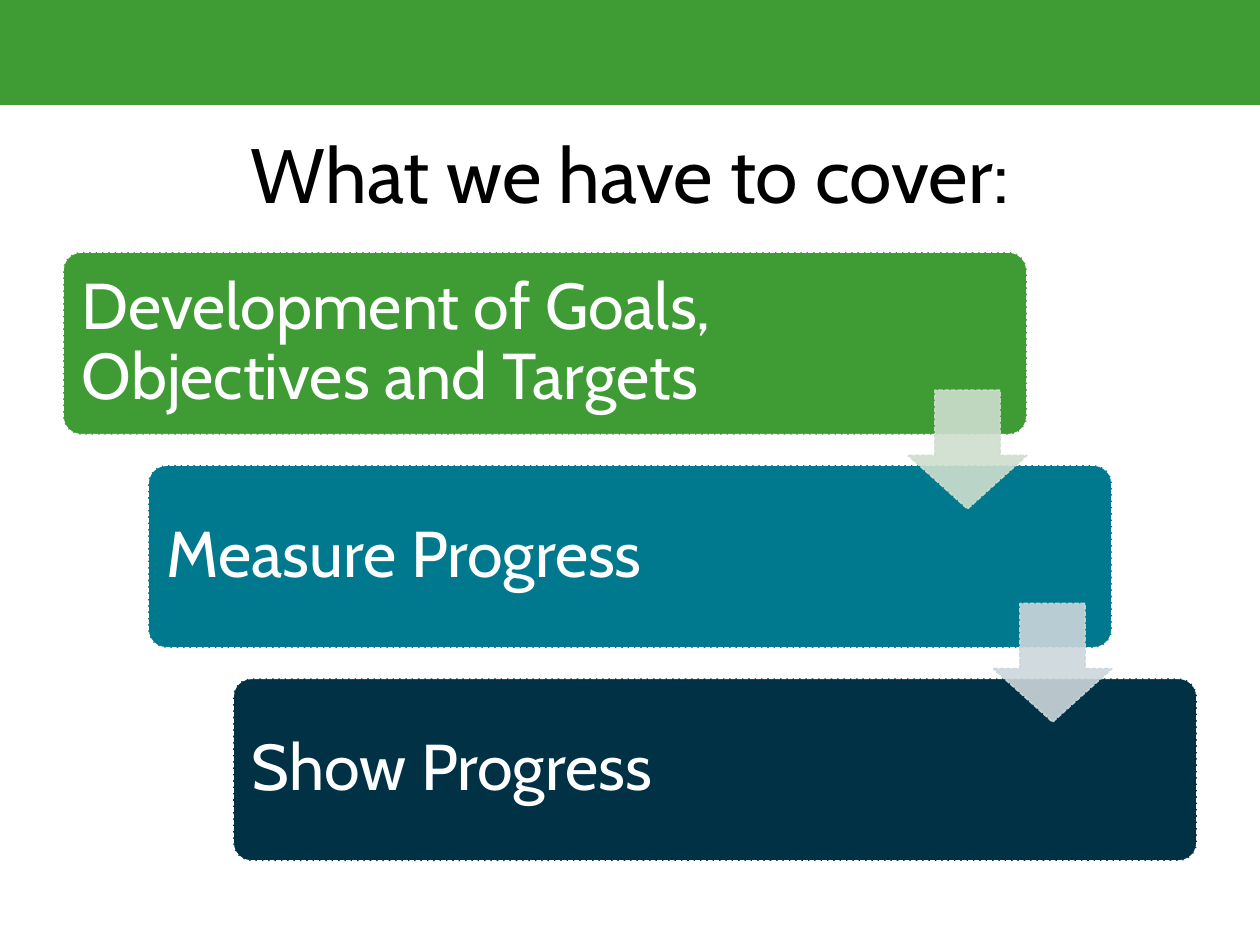
from pptx import Presentation
from pptx.dml.color import RGBColor
from pptx.enum.dml import MSO_LINE
from pptx.enum.shapes import MSO_SHAPE
from pptx.enum.text import MSO_ANCHOR, PP_ALIGN
from pptx.oxml.ns import qn
from pptx.util import Pt
from lxml import etree

RECT, ROUND, ARROW = MSO_SHAPE.RECTANGLE, MSO_SHAPE.ROUNDED_RECTANGLE, MSO_SHAPE.DOWN_ARROW
DASH, MIDDLE = MSO_LINE.SQUARE_DOT, MSO_ANCHOR.MIDDLE
LEFT, CENTER = PP_ALIGN.LEFT, PP_ALIGN.CENTER

TITLE = "What we have to cover:"
STEPS = [
    ("Development of Goals, Objectives and Targets", "3F9C35", 444.2),
    ("Measure Progress", "00798E", 434.2),
    ("Show Progress", "003145", 434.2),
]
ARROWS = ["CFDECE", "CCD7DB"]
THEME = {"font": "Cabin", "band": "3F9C35", "dark": "000000", "light": "FFFFFF",
         "title": 44, "step": 37, "line": 0.9, "alpha": 90}

WIDE, HIGH = 720, 540
BOX_W, BOX_H = 550.8, 104.4
X, Y, DX, DY = 36, 144, 48.6, 121.8
SIDE, DROP = 67.8, 79


def draw(slide, kind, at, fill, edge=None, adjust=()):
    shape = slide.shapes.add_shape(kind, *map(Pt, at))
    shape.shadow.inherit = False
    shape.fill.solid()
    shape.fill.fore_color.rgb = RGBColor.from_string(fill)
    for i, value in enumerate(adjust):
        shape.adjustments[i] = value
    if edge:
        shape.line.color.rgb = RGBColor.from_string(edge)
        shape.line.width = Pt(THEME["line"])
        shape.line.dash_style = DASH
    else:
        shape.line.fill.background()
    return shape


def fade(shape):
    for color in shape.element.spPr.iter(qn("a:srgbClr")):
        etree.SubElement(color, qn("a:alpha"), val=str(THEME["alpha"] * 1000))


def write(slide, text, at, size, color, align, inset, space):
    frame = slide.shapes.add_textbox(*map(Pt, at)).text_frame
    form = {"word_wrap": True, "vertical_anchor": MIDDLE}
    for side in ("left", "right", "top", "bottom"):
        form["margin_" + side] = Pt(inset)
    for name, value in form.items():
        setattr(frame, name, value)
    para = frame.paragraphs[0]
    para.text = text
    para.alignment = align
    para.line_spacing = space
    para.font.name = THEME["font"]
    para.font.size = Pt(size)
    para.font.color.rgb = RGBColor.from_string(color)


def main():
    deck = Presentation()
    deck.slide_width, deck.slide_height = Pt(WIDE), Pt(HIGH)
    slide = deck.slides.add_slide(deck.slide_layouts[6])

    draw(slide, RECT, (0, 0, WIDE, 60), THEME["band"])
    write(slide, TITLE, (36, 66, 648, 66), THEME["title"], THEME["dark"], CENTER, 3.6, 1.0)

    for i, (text, fill, width) in enumerate(STEPS):
        left, top = X + i * DX, Y + i * DY
        draw(slide, ROUND, (left, top, BOX_W, BOX_H), fill, THEME["light"], [0.1])
        write(slide, text, (left, top, width, BOX_H), THEME["step"], THEME["light"],
              LEFT, 10.8, 0.9)

    for i, fill in enumerate(ARROWS):
        left, top = X + i * DX + BOX_W - SIDE, Y + i * DY + DROP
        fade(draw(slide, ARROW, (left, top, SIDE, SIDE), fill, fill, [0.55, 0.45]))

    deck.save("out.pptx")


if __name__ == "__main__":
    main()
